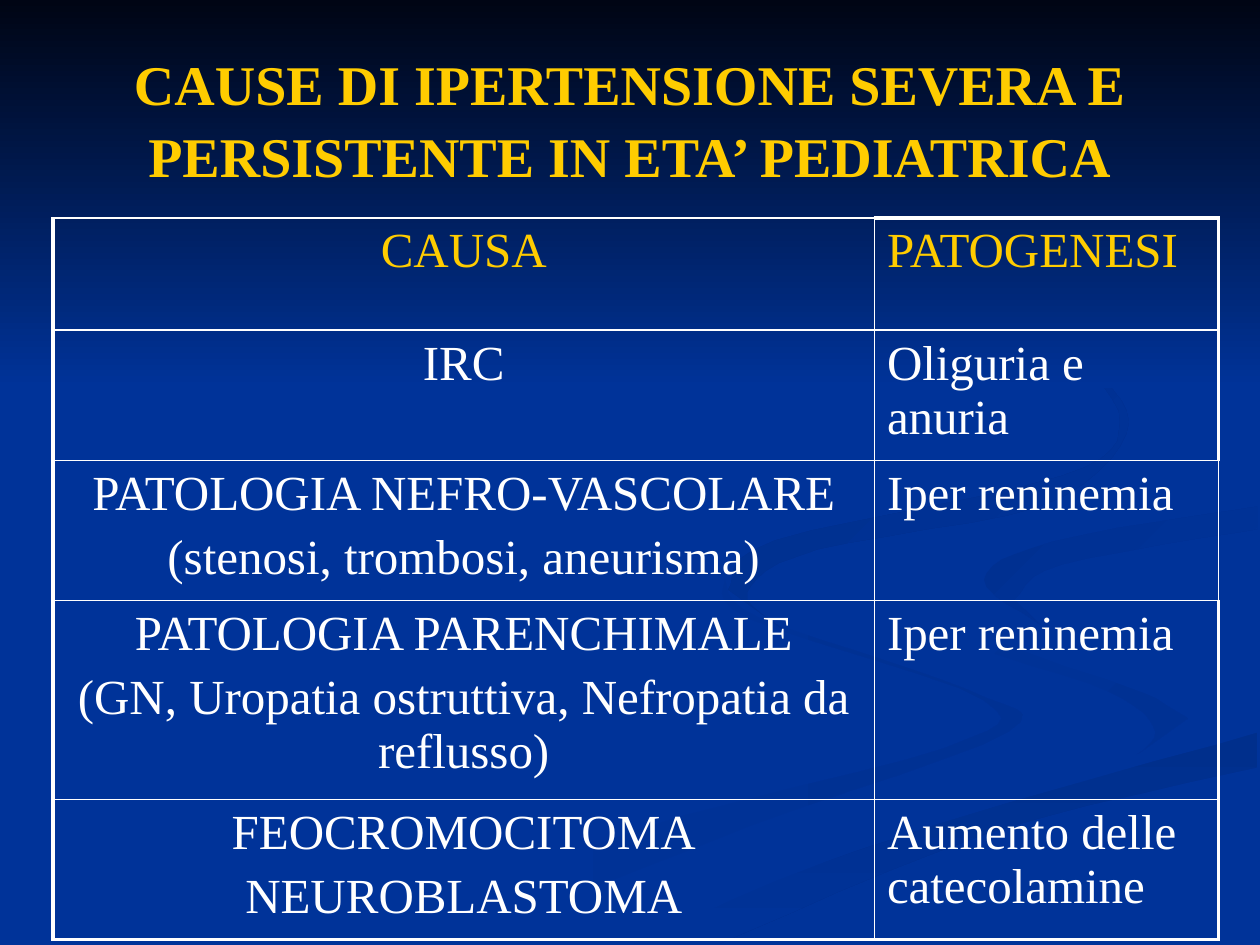
from pptx import Presentation
from pptx.dml.color import RGBColor
from pptx.enum.shapes import MSO_SHAPE
from pptx.enum.text import MSO_ANCHOR, PP_ALIGN
from pptx.oxml import parse_xml
from pptx.oxml.ns import nsdecls
from pptx.util import Emu, Pt

PX = 9144  # the slide is a grid of 1000 by 750 px
FONT = "Times New Roman"
BLUE = RGBColor(0x00, 0x33, 0x99)
NIGHT = RGBColor(0x00, 0x05, 0x14)
DUSK = RGBColor(0x00, 0x31, 0x93)
SHADE = RGBColor(0x00, 0x2F, 0x8C)
HAZE = RGBColor(0x00, 0x30, 0x91)
GOLD = RGBColor(0xFF, 0xCC, 0x00)
WHITE = RGBColor(0xFF, 0xFF, 0xFF)
THIN, THICK = 1, 2.25

TITLE = "CAUSE DI IPERTENSIONE SEVERA E PERSISTENTE IN ETA’ PEDIATRICA"
TITLE_BOX = (50, 30, 900, 125)
SKY_BOX = (0, 0, 1000, 308)

TABLE_LEFT, TABLE_TOP = 42, 173
COLUMN_WIDTHS = (652, 273)
# row height, paragraphs of the cause, pathogenesis, width of the right border
ROWS = [
    (89, ["CAUSA"], "PATOGENESI", THICK),
    (96, ["IRC"], "Oliguria e anuria", THICK),
    (104, ["PATOLOGIA NEFRO-VASCOLARE", "(stenosi, trombosi, aneurisma)"],
     "Iper reninemia", THIN),
    (147, ["PATOLOGIA PARENCHIMALE",
           "(GN, Uropatia ostruttiva, Nefropatia da reflusso)"],
     "Iper reninemia", THICK),
    (104, ["FEOCROMOCITOMA", "NEUROBLASTOMA"], "Aumento delle catecolamine", THICK),
]

# start colour, end colour, clockwise angle, edges of the ribbon in turn
RIBBONS = [
    (BLUE, DUSK, 0, [
        [(575, 459), (594, 491), (781, 556), (749, 594), (499, 661), (300, 749)],
        [(361, 749), (594, 656), (800, 581), (767, 547), (602, 490), (575, 459)]]),
    (BLUE, DUSK, 45, [
        [(724, 464), (755, 505), (880, 549), (917, 581), (894, 605)],
        [(943, 570), (870, 530), (745, 490), (724, 464)]]),
    (SHADE, BLUE, 90, [
        [(503, 749), (630, 693), (797, 638), (998, 581)],
        [(998, 609), (785, 661), (571, 749)]]),
    (BLUE, BLUE, 0, [
        [(999, 387), (755, 432), (725, 464), (793, 509), (943, 570),
         (843, 618), (619, 684), (477, 749)],
        [(503, 749), (696, 669), (999, 581)],
        [(999, 538), (848, 503), (782, 460), (835, 430), (999, 402)]]),
    (HAZE, BLUE, 45, [
        [(998, 402), (835, 430), (781, 460), (826, 496)],
        [(805, 476), (843, 448), (998, 420)]]),
    (SHADE, BLUE, 45, [
        [(762, 233), (864, 291), (894, 344), (825, 402), (649, 436),
         (593, 470), (622, 500)],
        [(578, 468), (615, 429), (842, 378), (889, 335), (846, 279), (762, 233)]]),
]
CURVE_STEPS = 6


def px(length):
    return Emu(length * PX)


def smooth(points):
    """Return a Catmull-Rom curve through the points."""
    padded = [points[0], *points, points[-1]]
    curve = [points[0]]
    for a, b, c, d in zip(padded, padded[1:], padded[2:], padded[3:]):
        for step in range(1, CURVE_STEPS + 1):
            t = step / CURVE_STEPS
            curve.append(tuple(
                q + t / 2 * (r - p + t * (2 * p - 5 * q + 4 * r - s
                                          + t * (3 * q - 3 * r + s - p)))
                for p, q, r, s in zip(a, b, c, d)))
    return curve


def paint(shape, start, end, angle):
    shape.shadow.inherit = False
    shape.line.fill.background()
    if start == end:
        shape.fill.solid()
        shape.fill.fore_color.rgb = start
        return
    shape.fill.gradient()
    shape.fill.gradient_angle = -angle % 360
    for stop, color in zip(shape.fill.gradient_stops, (start, end)):
        stop.color.rgb = color


def add_backdrop(slide):
    for start, end, angle, edges in RIBBONS:
        outline = [point for edge in edges for point in smooth(edge)]
        builder = slide.shapes.build_freeform(*outline[0], scale=PX)
        builder.add_line_segments(outline[1:], close=True)
        paint(builder.convert_to_shape(), start, end, angle)
    sky = slide.shapes.add_shape(MSO_SHAPE.RECTANGLE, *map(px, SKY_BOX))
    paint(sky, NIGHT, BLUE, 90)


def add_text(paragraph, text, size, color, alignment, bold=False):
    paragraph.alignment = alignment
    run = paragraph.add_run()
    run.text = text
    run.font.name = FONT
    run.font.size = Pt(size)
    run.font.bold = bold
    run.font.color.rgb = color


def set_borders(cell, left, right, top, bottom):
    properties = cell._tc.get_or_add_tcPr()
    for side, width in zip("LRTB", (left, right, top, bottom)):
        properties.append(parse_xml(
            f'<a:ln{side} {nsdecls("a")} w="{Pt(width)}"><a:solidFill>'
            f'<a:srgbClr val="{WHITE}"/></a:solidFill></a:ln{side}>'))


def fill_cell(cell, texts, color, alignment):
    cell.fill.background()
    frame = cell.text_frame
    for index, text in enumerate(texts):
        paragraph = frame.add_paragraph() if index else frame.paragraphs[0]
        if index:
            paragraph.space_before = Pt(5.6)
        add_text(paragraph, text, 28, color, alignment)


def add_title(slide):
    frame = slide.shapes.add_textbox(*map(px, TITLE_BOX)).text_frame
    frame.word_wrap = True
    frame.vertical_anchor = MSO_ANCHOR.MIDDLE
    paragraph = frame.paragraphs[0]
    paragraph.line_spacing = 1.08
    add_text(paragraph, TITLE, 32, GOLD, PP_ALIGN.CENTER, bold=True)


def add_causes_table(slide):
    width, height = sum(COLUMN_WIDTHS), sum(row[0] for row in ROWS)
    table = slide.shapes.add_table(
        len(ROWS), len(COLUMN_WIDTHS),
        px(TABLE_LEFT), px(TABLE_TOP), px(width), px(height)).table
    table.first_row = table.horz_banding = False
    for column, column_width in zip(table.columns, COLUMN_WIDTHS):
        column.width = px(column_width)
    for index, (row_height, causes, pathogenesis, right) in enumerate(ROWS):
        table.rows[index].height = px(row_height)
        cause_cell, pathogenesis_cell = table.rows[index].cells
        color = WHITE if index else GOLD
        top = THIN if index else THICK
        bottom = THICK if index == len(ROWS) - 1 else THIN
        set_borders(cause_cell, THICK, THIN, THIN, bottom)
        set_borders(pathogenesis_cell, THIN, right, top, bottom)
        fill_cell(cause_cell, causes, color, PP_ALIGN.CENTER)
        fill_cell(pathogenesis_cell, [pathogenesis], color, PP_ALIGN.LEFT)


def main():
    presentation = Presentation()
    presentation.slide_width, presentation.slide_height = px(1000), px(750)
    slide = presentation.slides.add_slide(presentation.slide_layouts[6])
    slide.background.fill.solid()
    slide.background.fill.fore_color.rgb = BLUE
    add_backdrop(slide)
    add_title(slide)
    add_causes_table(slide)
    presentation.save("out.pptx")


if __name__ == "__main__":
    main()
